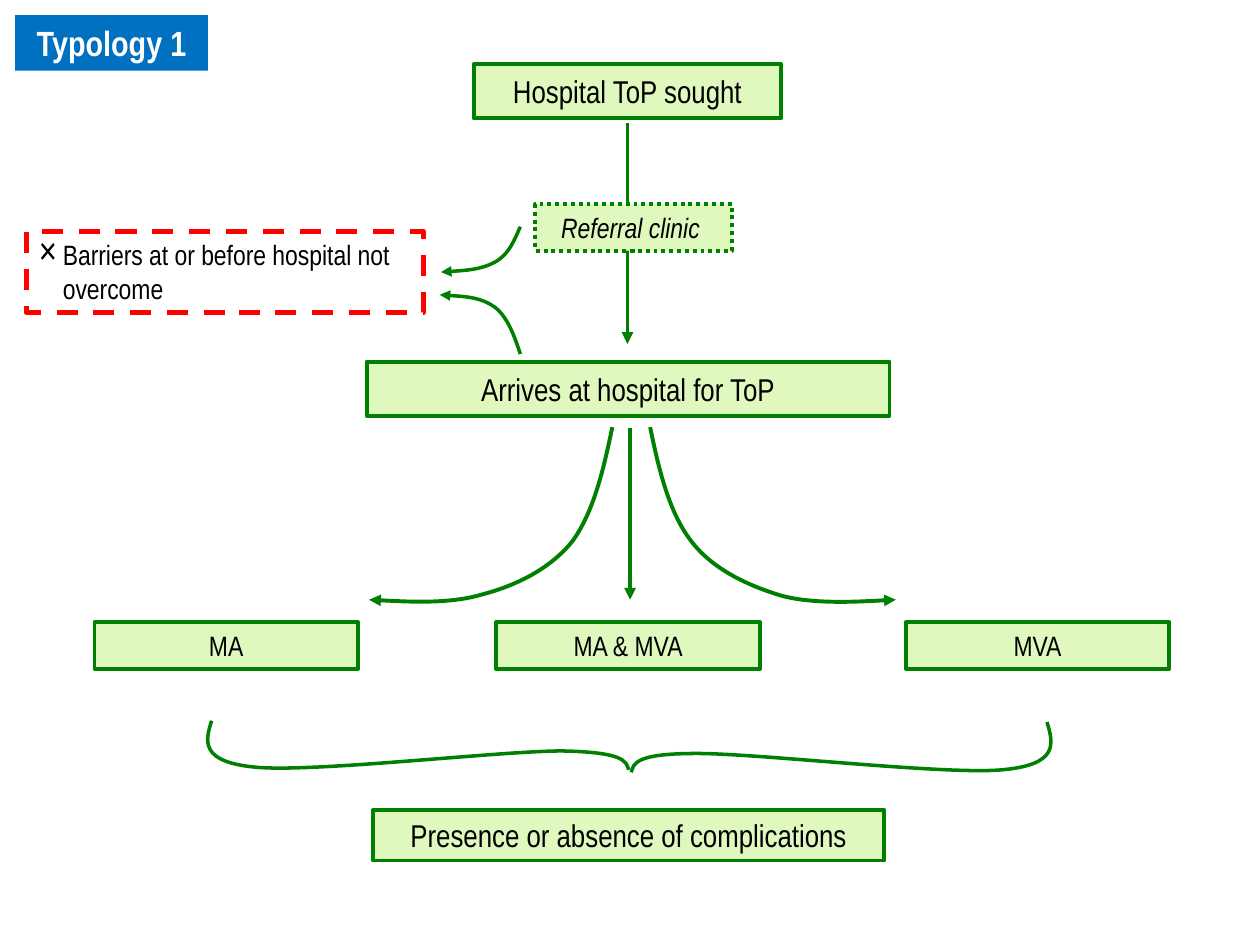
from lxml import etree
from pptx import Presentation
from pptx.dml.color import RGBColor
from pptx.enum.dml import MSO_LINE
from pptx.enum.shapes import MSO_CONNECTOR, MSO_SHAPE
from pptx.enum.text import MSO_ANCHOR, MSO_AUTO_SIZE, PP_ALIGN
from pptx.oxml.ns import qn
from pptx.util import Inches, Pt

RECTANGLE = MSO_SHAPE.RECTANGLE
STRAIGHT = MSO_CONNECTOR.STRAIGHT
CENTER, LEFT = PP_ALIGN.CENTER, PP_ALIGN.LEFT
DOTTED, DASHED = MSO_LINE.ROUND_DOT, MSO_LINE.DASH
TOP, MIDDLE = MSO_ANCHOR.TOP, MSO_ANCHOR.MIDDLE
FIXED_SIZE = MSO_AUTO_SIZE.NONE

GREEN = RGBColor(0x00, 0x80, 0x00)
PALE_GREEN = RGBColor(0xDE, 0xF8, 0xBE)
RED = RGBColor(0xFF, 0x00, 0x00)
BLUE = RGBColor(0x00, 0x70, 0xC0)
BLACK = RGBColor(0x00, 0x00, 0x00)
WHITE = RGBColor(0xFF, 0xFF, 0xFF)
FONT = "Arial Narrow"

# Content: text, (left, top, width, height), font size
TITLE = ("Typology 1", (0.12, 0.12, 1.53, 0.44), 20)
STEPS = [
    ("Hospital ToP sought", (3.76, 0.51, 2.44, 0.43), 18),
    ("Arrives at hospital for ToP", (2.91, 2.87, 4.15, 0.43), 18),
    ("Presence or absence of complications", (2.96, 6.43, 4.06, 0.4), 18),
]
METHODS = [("MA", 0.75), ("MA & MVA", 3.94), ("MVA", 7.19)]
METHOD_TOP, METHOD_WIDTH, METHOD_HEIGHT = 4.94, 2.09, 0.37
REFERRAL = ("Referral clinic ", (4.25, 1.62, 1.56, 0.37), 16)
BARRIERS = ("Barriers at or before hospital not overcome", (0.21, 1.84, 3.15, 0.64), 16)

# Straight arrows: x, top, bottom
DOWN_ARROWS = [(4.98, 0.98, 2.73), (5, 3.4, 4.76)]

# Curves: line width, arrowhead, start point followed by Bezier triples
CURVES = [
    (2.25, True, [(5.16, 3.39), (5.23, 3.73), (5.31, 4.07), (5.49, 4.3),
                  (5.66, 4.52), (5.94, 4.65), (6.21, 4.73),
                  (6.48, 4.8), (7.11, 4.76), (7.11, 4.76)]),
    (2.25, True, [(4.86, 3.39), (4.79, 3.73), (4.71, 4.07), (4.54, 4.3),
                  (4.36, 4.52), (4.09, 4.65), (3.82, 4.72),
                  (3.55, 4.8), (2.93, 4.76), (2.93, 4.76)]),
    (2, False, [(1.68, 5.72), (1.63, 5.88), (1.58, 6.05), (2.04, 6.09),
                (2.51, 6.13), (3.97, 5.96), (4.46, 5.96),
                (4.95, 5.97), (4.97, 6.04), (4.99, 6.11)]),
    (2, False, [(8.31, 5.73), (8.36, 5.9), (8.41, 6.07), (7.95, 6.11),
                (7.49, 6.15), (6.03, 5.98), (5.53, 5.98),
                (5.04, 5.98), (5.03, 6.06), (5.01, 6.13)]),
    (2, True, [(4.13, 1.8), (4.08, 1.91), (4.04, 2.02), (3.93, 2.08),
               (3.82, 2.14), (3.66, 2.15), (3.5, 2.16)]),
    (2, True, [(4.13, 2.81), (4.08, 2.66), (4.03, 2.52), (3.93, 2.44),
               (3.82, 2.36), (3.65, 2.35), (3.49, 2.34)]),
]


def style_line(shape, color, width, dash=None, arrow=False):
    line = shape.line
    line.color.rgb = color
    line.width = Pt(width)
    if dash:
        line.dash_style = dash
    if arrow:
        etree.SubElement(line._get_or_add_ln(), qn("a:tailEnd"), type="triangle")


def set_text(shape, text, size, color=BLACK, align=CENTER, anchor=MIDDLE, **font_format):
    frame = shape.text_frame
    frame.text = text
    frame.word_wrap = True
    frame.auto_size = FIXED_SIZE
    frame.vertical_anchor = anchor
    paragraph = frame.paragraphs[0]
    paragraph.alignment = align
    font = paragraph.runs[0].font
    font.color.rgb = color
    for name, value in {"name": FONT, "size": Pt(size), **font_format}.items():
        setattr(font, name, value)
    return paragraph


def add_box(slide, text, bounds, size, fill=PALE_GREEN, color=GREEN, width=2.25,
            dash=None, **text_format):
    box = slide.shapes.add_shape(RECTANGLE, *map(Inches, bounds))
    box.shadow.inherit = False
    if fill is None:
        box.fill.background()
    else:
        box.fill.solid()
        box.fill.fore_color.rgb = fill
    style_line(box, color, width, dash)
    return set_text(box, text, size, **text_format)


def add_down_arrow(slide, x, top, bottom):
    connector = slide.shapes.add_connector(
        STRAIGHT, Inches(x), Inches(top), Inches(x), Inches(bottom))
    style_line(connector, GREEN, 2.25, arrow=True)
    etree.SubElement(connector._element.spPr, qn("a:effectLst"))


def add_curve(slide, width, arrow, points):
    start, *rest = [(Inches(x), Inches(y)) for x, y in points]
    builder = slide.shapes.build_freeform(*start)
    builder.add_line_segments(rest, close=False)
    curve = builder.convert_to_shape()
    curve.shadow.inherit = False
    curve.fill.background()
    style_line(curve, GREEN, width, arrow=arrow)
    # Merge every three line points into one cubic Bezier segment
    outline = curve._element.find(".//" + qn("a:path"))
    segments = outline.findall(qn("a:lnTo"))
    for first in range(0, len(segments), 3):
        bezier = etree.SubElement(outline, qn("a:cubicBezTo"))
        for segment in segments[first:first + 3]:
            bezier.append(segment[0])
            outline.remove(segment)


def add_bullet(paragraph, character, percent, indent):
    properties = paragraph._p.get_or_add_pPr()
    properties.set("marL", str(Inches(indent)))
    properties.set("indent", str(-Inches(indent)))
    etree.SubElement(properties, qn("a:buSzPct"), val=str(percent * 1000))
    etree.SubElement(properties, qn("a:buFont"), typeface=FONT)
    etree.SubElement(properties, qn("a:buChar"), char=character)


def main():
    presentation = Presentation()
    presentation.slide_width, presentation.slide_height = Inches(10), Inches(7.5)
    slide = presentation.slides.add_slide(presentation.slide_layouts[5])

    # Title label
    text, bounds, size = TITLE
    title = slide.shapes.title
    title.left, title.top, title.width, title.height = map(Inches, bounds)
    title.fill.solid()
    title.fill.fore_color.rgb = BLUE
    set_text(title, text, size, color=WHITE, bold=True)

    # Arrows and braces
    for arrow in DOWN_ARROWS:
        add_down_arrow(slide, *arrow)
    for curve in CURVES:
        add_curve(slide, *curve)

    # Pathway boxes
    for step in STEPS:
        add_box(slide, *step)
    for text, left in METHODS:
        add_box(slide, text, (left, METHOD_TOP, METHOD_WIDTH, METHOD_HEIGHT), 16)
    add_box(slide, *REFERRAL, dash=DOTTED, anchor=TOP, italic=True)

    # Barriers box
    paragraph = add_box(slide, *BARRIERS, fill=None, color=RED, width=3,
                        dash=DASHED, align=LEFT, anchor=TOP)
    paragraph.space_before = Pt(2)
    add_bullet(paragraph, "×", 135, 0.19)

    presentation.save("out.pptx")


if __name__ == "__main__":
    main()
